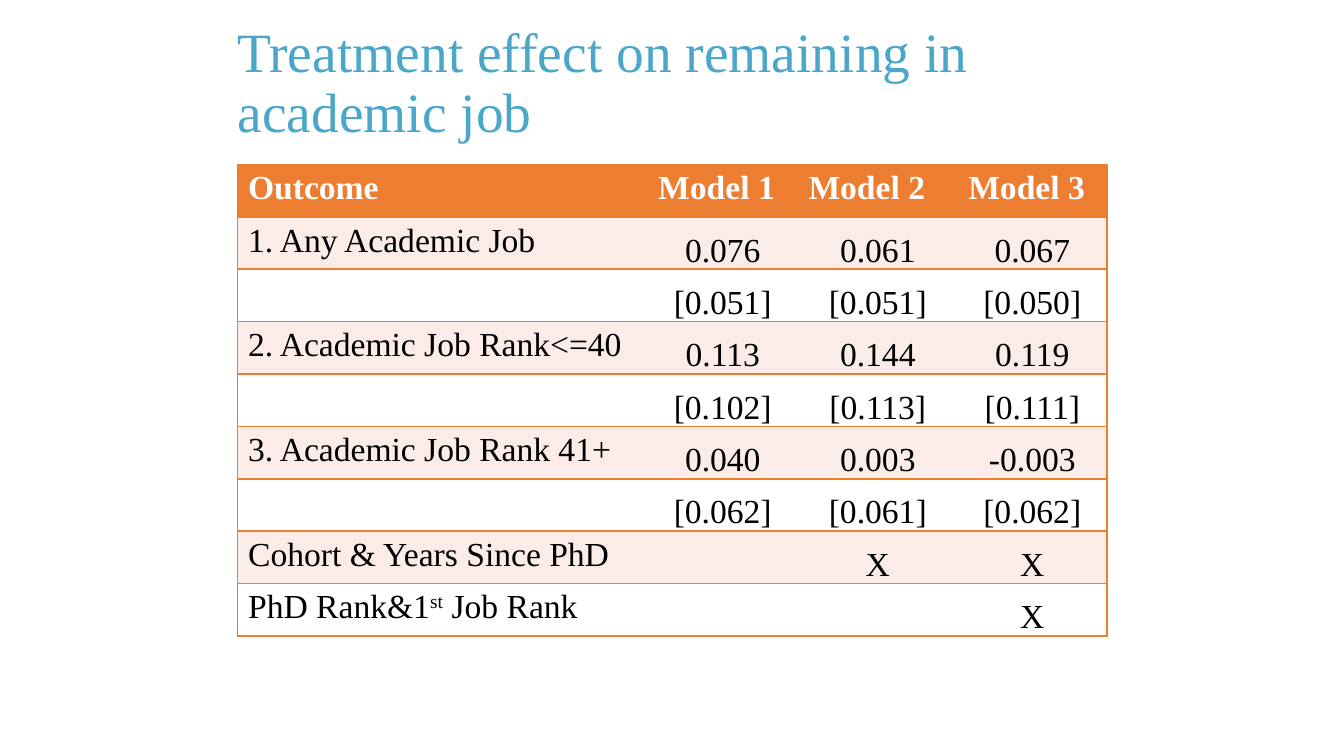
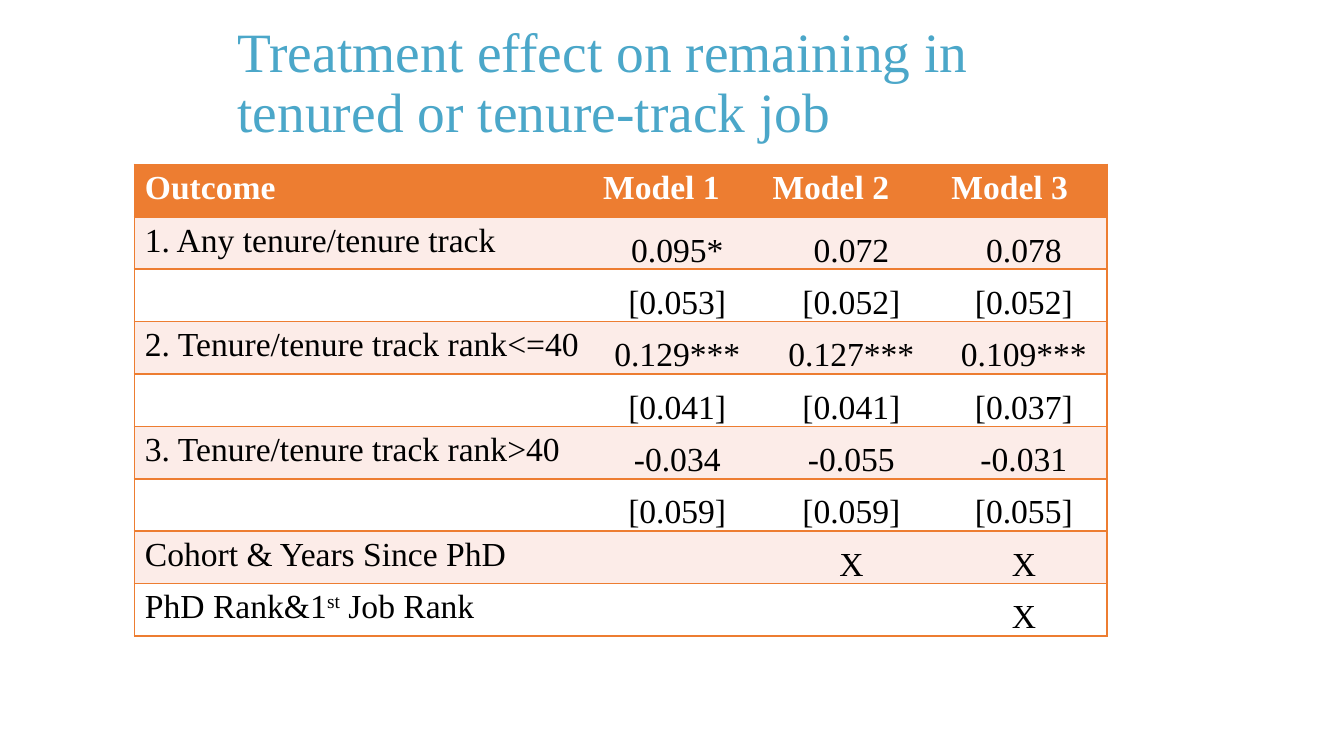
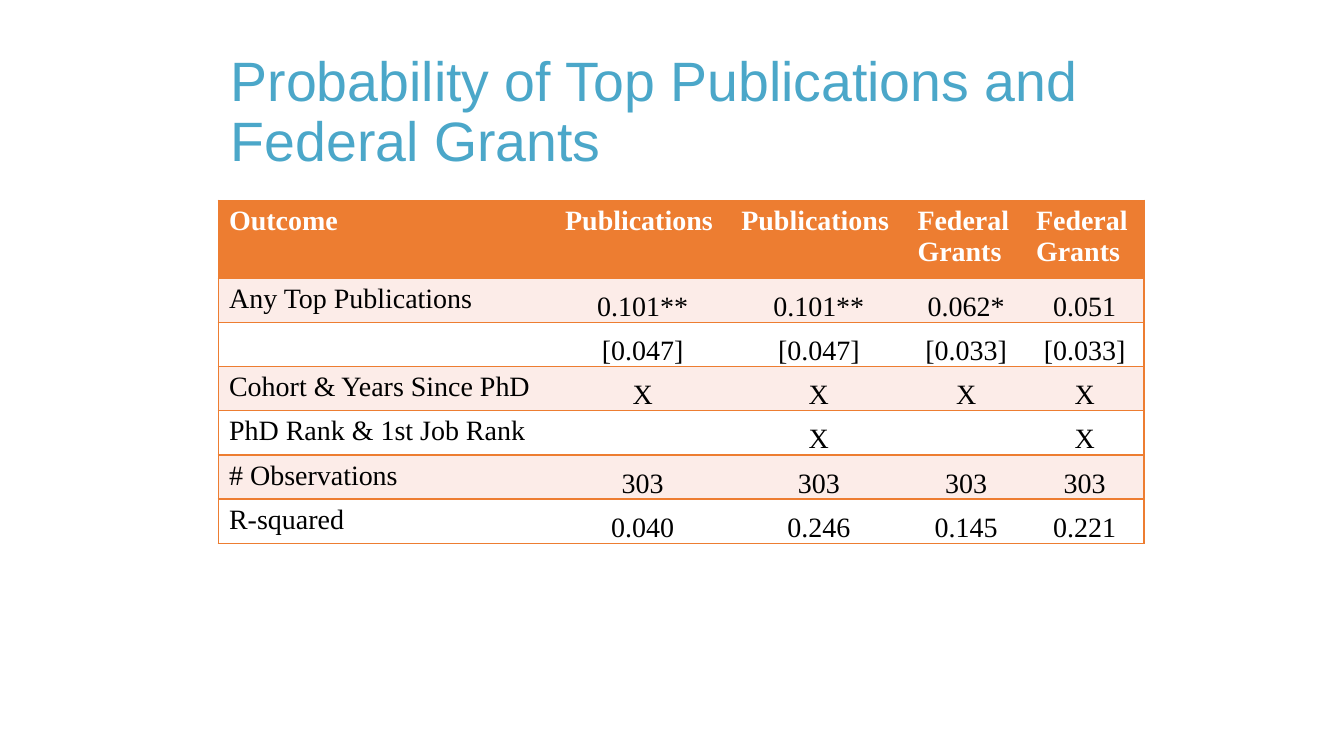
from lxml.etree import SubElement
from pptx import Presentation
from pptx.dml.color import RGBColor
from pptx.enum.text import MSO_ANCHOR, PP_ALIGN
from pptx.oxml.ns import qn
from pptx.util import Cm, Pt

ORANGE = RGBColor(0xED, 0x7D, 0x31)
BLUSH = RGBColor(0xFC, 0xEC, 0xE8)
WHITE = RGBColor(0xFF, 0xFF, 0xFF)
BLACK = RGBColor(0x00, 0x00, 0x00)
SKY = RGBColor(0x4B, 0xA7, 0xC9)

SERIF = "Times New Roman"
SANS = "Arial"
PLAIN_TABLE_STYLE = "{2D5ABB26-0587-4C30-8999-92F81FD0307C}"
SUPERSCRIPT_MARK = "^"

MODEL_HEADER = ("Outcome", "Model 1", "Model 2", "Model 3")
MODEL_CONTROLS = (
    ("Cohort & Years Since PhD", "", "X", "X"),
    ("PhD Rank&1^st^ Job Rank", "", "", "X"),
)

ACADEMIC_JOB = (
    MODEL_HEADER,
    ("1. Any Academic Job", "0.076", "0.061", "0.067"),
    ("", "[0.051]", "[0.051]", "[0.050]"),
    ("2. Academic Job Rank<=40", "0.113", "0.144", "0.119"),
    ("", "[0.102]", "[0.113]", "[0.111]"),
    ("3. Academic Job Rank 41+", "0.040", "0.003", "-0.003"),
    ("", "[0.062]", "[0.061]", "[0.062]"),
    *MODEL_CONTROLS,
)

TENURE_TRACK = (
    MODEL_HEADER,
    ("1. Any tenure/tenure track", "0.095*", "0.072", "0.078"),
    ("", "[0.053]", "[0.052]", "[0.052]"),
    ("2. Tenure/tenure track rank<=40", "0.129***", "0.127***", "0.109***"),
    ("", "[0.041]", "[0.041]", "[0.037]"),
    ("3. Tenure/tenure track rank>40", "-0.034", "-0.055", "-0.031"),
    ("", "[0.059]", "[0.059]", "[0.055]"),
    *MODEL_CONTROLS,
)

PUBLICATIONS_GRANTS = (
    ("Outcome", "Publications", "Publications", "Federal\nGrants", "Federal\nGrants"),
    ("Any Top Publications", "0.101**", "0.101**", "0.062*", "0.051"),
    ("", "[0.047]", "[0.047]", "[0.033]", "[0.033]"),
    ("Cohort & Years Since PhD", "X", "X", "X", "X"),
    ("PhD Rank & 1st Job Rank", "", "X", "", "X"),
    ("# Observations", "303", "303", "303", "303"),
    ("R-squared", "0.040", "0.246", "0.145", "0.221"),
)


class Deck:
    def __init__(self):
        self.presentation = Presentation()
        self.presentation.slide_width = Cm(25.4)
        self.presentation.slide_height = Cm(14.29)
        self.slide = None

    def new_slide(self):
        self.slide = self.presentation.slides.add_slide(self.presentation.slide_layouts[6])

    def run(self, paragraph, text, size, color, font=SERIF, bold=False):
        run = paragraph.add_run()
        run.text = text
        run.font.name = font
        run.font.size = Pt(size)
        run.font.bold = bold
        run.font.color.rgb = color
        return run

    def title(self, text, left, top, width, height, font=SERIF):
        frame = self.slide.shapes.add_textbox(Cm(left), Cm(top), Cm(width), Cm(height)).text_frame
        frame.word_wrap = True
        frame.vertical_anchor = MSO_ANCHOR.MIDDLE
        heading = frame.paragraphs[0]
        heading.line_spacing = 0.9
        self.run(heading, text, 29.7, SKY, font)

    def border(self, cell, sides):
        properties = cell._tc.get_or_add_tcPr()
        for side in sides:
            line = SubElement(properties, qn(f"a:ln{side}"), w=str(Pt(1)))
            fill = SubElement(line, qn("a:solidFill"))
            SubElement(fill, qn("a:srgbClr"), val=str(ORANGE))

    def cell_text(self, cell, text, size, color, bold):
        paragraph = cell.text_frame.paragraphs[0]
        for line_number, line in enumerate(text.split("\n")):
            if line_number:
                paragraph.add_line_break()
            for part_number, part in enumerate(line.split(SUPERSCRIPT_MARK)):
                run = self.run(paragraph, part, size, color, bold=bold)
                if part_number % 2:
                    run.font._element.set("baseline", "30000")
        return paragraph

    def table(self, rows, left, top, widths, header_height, row_height, size):
        heights = [header_height] + [row_height] * (len(rows) - 1)
        table = self.slide.shapes.add_table(
            len(rows), len(widths), Cm(left), Cm(top), Cm(sum(widths)), Cm(sum(heights))
        ).table
        table._tbl.tblPr.find(qn("a:tableStyleId")).text = PLAIN_TABLE_STYLE
        table.horz_banding = False
        for column, width in zip(table.columns, widths):
            column.width = Cm(width)
        for row, height in zip(table.rows, heights):
            row.height = Cm(height)
        for row_number, texts in enumerate(rows):
            is_header = row_number == 0
            band = ORANGE if is_header else BLUSH if row_number % 2 else WHITE
            for column_number, text in enumerate(texts):
                cell = table.cell(row_number, column_number)
                outer = {0: "L", len(widths) - 1: "R"}.get(column_number, "")
                self.border(cell, outer + "TB")
                cell.fill.solid()
                cell.fill.fore_color.rgb = band
                paragraph = self.cell_text(cell, text, size, WHITE if is_header else BLACK, is_header)
                if is_header or (column_number == 0 and text):
                    cell.margin_left = cell.margin_right = Cm(0.2)
                    cell.margin_top = cell.margin_bottom = Cm(0.1)
                else:
                    cell.margin_left = cell.margin_right = cell.margin_top = Cm(0.02)
                    cell.margin_bottom = Cm(0)
                    cell.vertical_anchor = MSO_ANCHOR.BOTTOM
                    paragraph.alignment = PP_ALIGN.CENTER


def main():
    deck = Deck()

    model_slides = (
        ("Treatment effect on remaining in academic job",
         ACADEMIC_JOB, 4.49, (7.75, 2.84, 3.02, 2.82)),
        ("Treatment effect on remaining in tenured or tenure-track job",
         TENURE_TRACK, 2.54, (8.66, 3.2, 3.38, 3.14)),
    )
    for heading, results, left, widths in model_slides:
        deck.new_slide()
        deck.title(heading, 4.24, 0.3, 16.69, 2.59)
        deck.table(results, left, 3.11, widths, 0.99, 0.99, 18)

    deck.new_slide()
    deck.title("Probability of Top Publications and Federal Grants", 4.11, 0.76, 16.79, 2.77, SANS)
    deck.table(PUBLICATIONS_GRANTS, 4.13, 3.79, (6.35, 3.33, 3.33, 2.24, 2.24), 1.45, 0.83, 15)

    deck.presentation.save("out.pptx")


if __name__ == "__main__":
    main()
